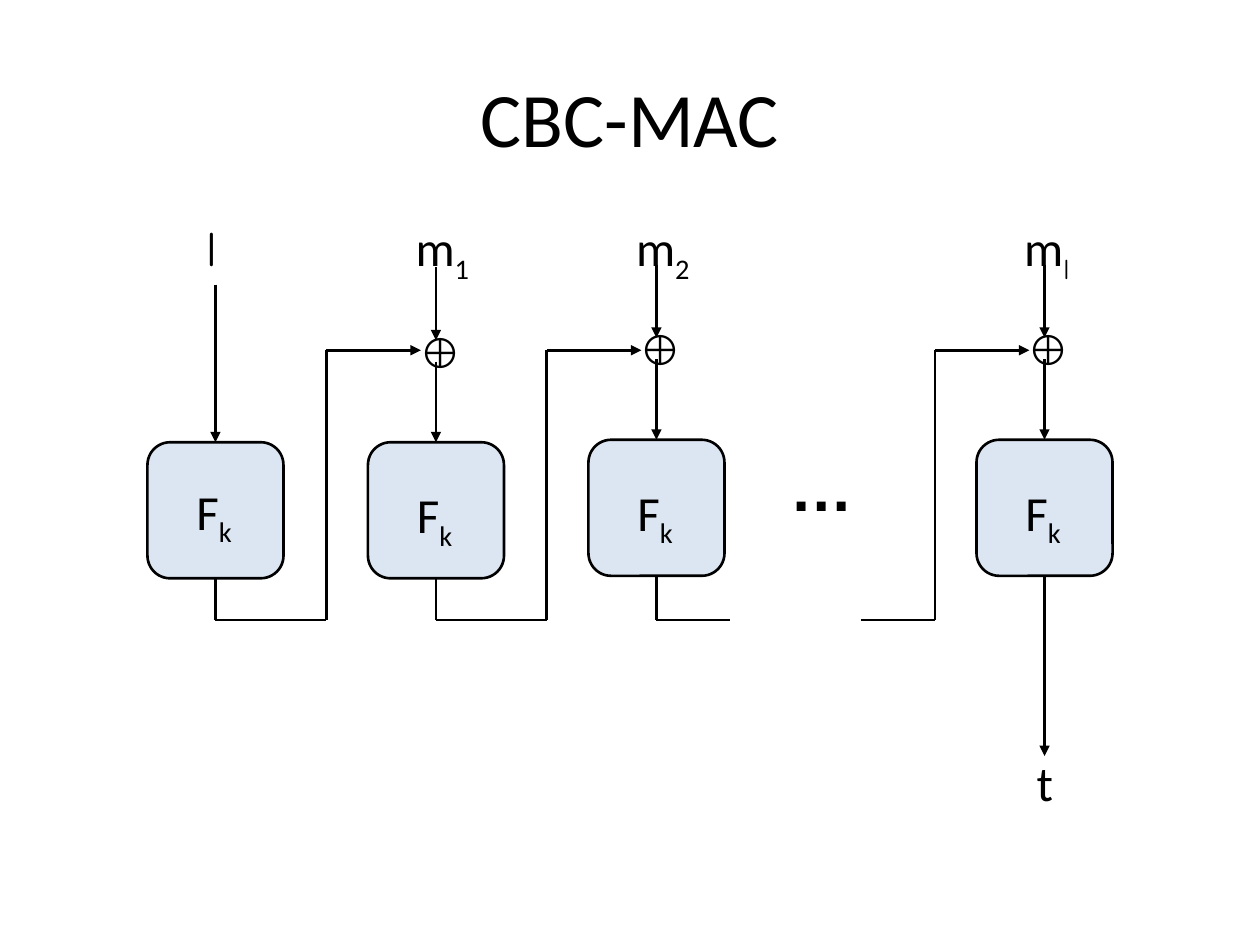
from lxml.etree import SubElement
from pptx import Presentation
from pptx.dml.color import RGBColor
from pptx.enum.shapes import MSO_CONNECTOR, MSO_SHAPE
from pptx.enum.text import MSO_ANCHOR, MSO_AUTO_SIZE, PP_ALIGN
from pptx.oxml.ns import qn
from pptx.util import Pt

PX = 9144
BLACK = RGBColor(0x00, 0x00, 0x00)
PALE_BLUE = RGBColor(0xDC, 0xE6, 0xF2)
BOX_SIZE = 108
RAIL_Y = 492
FEEDBACK_Y = 278

presentation = Presentation()
presentation.slide_width = 1000 * PX
presentation.slide_height = 750 * PX
slide = presentation.slides.add_slide(presentation.slide_layouts[5])


def add_text(left, top, width, height, base, sub="", size=28, font="Calibri", sub_font="Calibri", bold=False):
    shape = slide.shapes.add_textbox(left * PX, top * PX, width * PX, height * PX)
    shape.text_frame.word_wrap = False
    shape.text_frame.auto_size = MSO_AUTO_SIZE.SHAPE_TO_FIT_TEXT
    paragraph = shape.text_frame.paragraphs[0]
    for text, name, baseline in ((base, font, None), (sub, sub_font, "-25000")):
        if not text:
            continue
        run = paragraph.add_run()
        run.text = text
        for attribute, value in {"name": name, "size": Pt(size), "bold": bold}.items():
            setattr(run.font, attribute, value)
        run.font.color.rgb = BLACK
        if baseline:
            run.font._element.set("baseline", baseline)


def add_line(x1, y1, x2, y2, arrow=False, source=None, target=None):
    connector = slide.shapes.add_connector(MSO_CONNECTOR.STRAIGHT, x1 * PX, y1 * PX, x2 * PX, y2 * PX)
    connector.line.color.rgb = BLACK
    connector.line.width = Pt(1.5)
    if arrow:
        SubElement(connector.line._get_or_add_ln(), qn("a:tailEnd"), type="triangle")
    SubElement(connector._element.spPr, qn("a:effectLst"))
    if source is not None:
        connector.begin_connect(source, 2)
    if target is not None:
        connector.end_connect(target, 0)


title = slide.shapes.title
for attribute, value in {"left": 50, "top": 30, "width": 900, "height": 125}.items():
    setattr(title, attribute, value * PX)
title.text_frame.text = "CBC-MAC"
title.text_frame.vertical_anchor = MSO_ANCHOR.MIDDLE
paragraph = title.text_frame.paragraphs[0]
paragraph.alignment = PP_ALIGN.CENTER
for attribute, value in {"name": "Calibri", "size": Pt(44)}.items():
    setattr(paragraph.font, attribute, value)
paragraph.font.color.rgb = BLACK

blocks = [
    (171, 351, 377, None, 259),
    (346, 351, 380, "1", 434),
    (521, 349, 378, "2", 579),
    (829, 349, 378, "l", None),
]
for center, top, label_top, index, rail_end in blocks:
    box = slide.shapes.add_shape(
        MSO_SHAPE.ROUNDED_RECTANGLE, (center - 54) * PX, top * PX, BOX_SIZE * PX, BOX_SIZE * PX)
    box.shadow.inherit = False
    box.fill.solid()
    box.fill.fore_color.rgb = PALE_BLUE
    box.line.color.rgb = BLACK
    box.line.width = Pt(1.5)
    add_text(center - 25, label_top, 50, 57, "F", "k")

    if index is None:
        add_text(154, 168, 33, 57, "l", font="Comic Neue")
        add_line(center, 226, center, top, arrow=True, target=box)
    else:
        sub_font = "Comic Neue" if index == "l" else "Calibri"
        add_text(center - 26, 168, 65, 57, "m", index, sub_font=sub_font)
        add_line(center, top - 139, center, top - 81, arrow=True)
        add_text(center - 23, top - 97, 46, 51, "⊕", size=24, font="Arial")
        add_line(center, top - 64, center, top, arrow=True, target=box)
        riser = center - 87
        add_line(riser, RAIL_Y, riser, FEEDBACK_Y)
        add_line(riser, FEEDBACK_Y, center - 12, FEEDBACK_Y, arrow=True)

    bottom = top + BOX_SIZE
    if rail_end is None:
        add_line(center, bottom, center, 600, arrow=True, source=box)
    else:
        add_line(center, bottom, center, RAIL_Y, source=box)
        add_line(center, RAIL_Y, rail_end, RAIL_Y)

add_line(683, RAIL_Y, 742, RAIL_Y)
add_text(617, 351, 71, 71, "…", size=36, font="Arial", bold=True)
add_text(813, 592, 33, 57, "t")

presentation.save("out.pptx")
